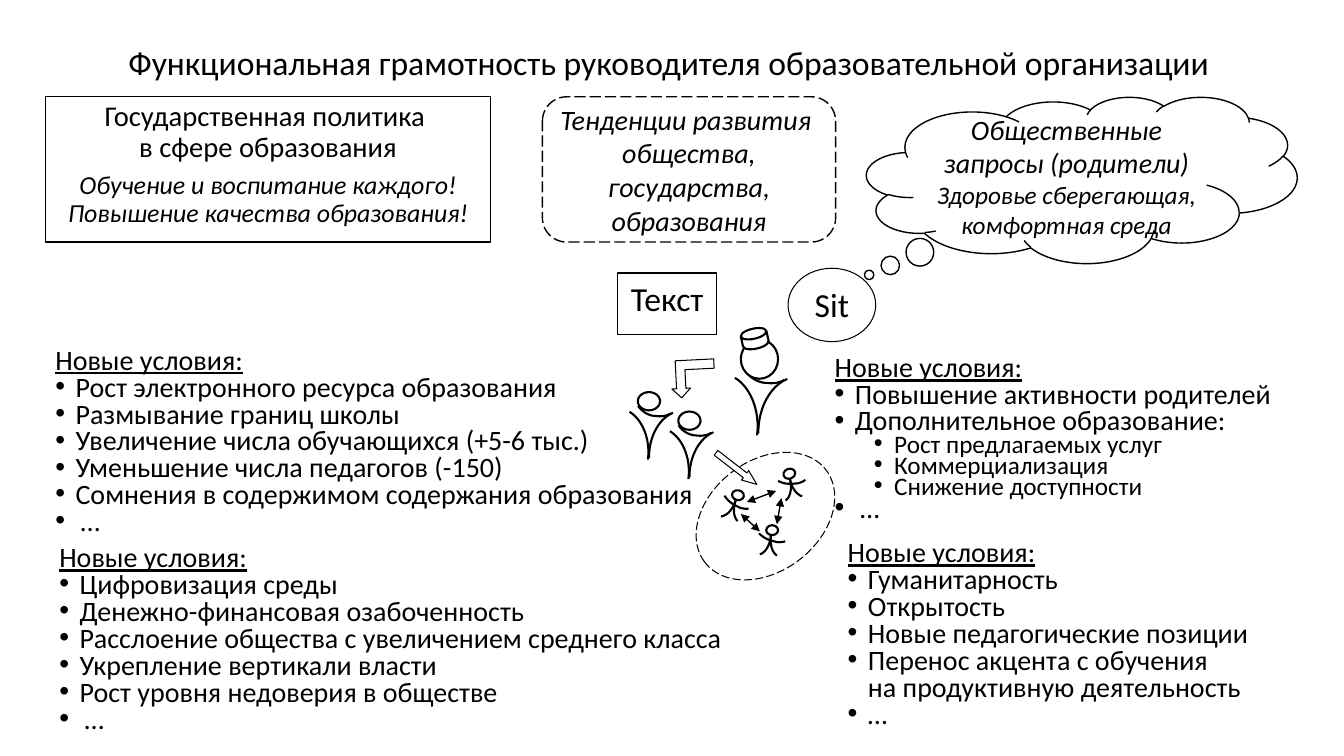
from dataclasses import dataclass
from math import cos, radians, sin

from lxml import etree
from pptx import Presentation
from pptx.dml.color import RGBColor
from pptx.enum import dml, shapes, text
from pptx.oxml.ns import qn
from pptx.util import Cm, Pt

KIND = shapes.MSO_SHAPE
DASH = dml.MSO_LINE.LONG_DASH


@dataclass
class Theme:
    font: str = "Calibri"
    ink: RGBColor = RGBColor(0, 0, 0)
    paper: RGBColor = RGBColor(255, 255, 255)
    big: float = 24
    lead: float = 20.4
    body: float = 20
    note: float = 18.5
    small: float = 18
    thin: float = 0.75
    line: float = 1
    bold: float = 1.5


# Body parts of the people: cubic curves and a head (x, y, width, height), cm
ADULT = [
    [(.69, -1.4), (.56, -1.32), (.41, -1.3), (.25, -1.32),
     (.03, -1.32), (-.18, -1.45), (-.3, -1.63)],
    [(-.56, -1.45), (-.18, -1.22), (.08, -.64), (0, 0)],
    [(.76, -1.42), (.33, -1.24), (.03, -.69), (.03, -.05)],
]
CHILD = [
    [(.36, .14), (.25, .17), (.15, .17), (.08, .14),
     (-.08, .11), (-.2, .04), (-.3, -.06)],
    [(.15, .5), (.03, .42), (-.03, .22), (0, -.01)],
    [(-.28, .47), (-.13, .42), (-.03, .24), (0, .01)],
]


def trace(curve, steps=12):
    """Points along a chain of cubic curves."""
    dots = [curve[0]]
    for i in range(0, len(curve) - 1, 3):
        for n in range(1, steps + 1):
            t = n / steps
            parts = ((1 - t) ** 3, 3 * t * (1 - t) ** 2, 3 * t * t * (1 - t), t ** 3)
            dots.append(tuple(sum(w * p[k] for w, p in zip(parts, curve[i:i + 4]))
                              for k in (0, 1)))
    return dots


class Deck:
    def __init__(self, theme):
        self.theme = theme
        self.show = Presentation()
        self.show.slide_width, self.show.slide_height = Cm(33.87), Cm(19.05)
        self.slide = self.show.slides.add_slide(self.show.slide_layouts[4])
        self.items = self.slide.shapes

    def style(self, par, size, italic=False, under=False):
        for run in par.runs:
            font = run.font
            font.name, font.size, font.bold = self.theme.font, Pt(size), False
            font.italic, font.underline = italic, under
            font.color.rgb = self.theme.ink

    def place(self, shape, box):
        shape.left, shape.top, shape.width, shape.height = map(Cm, box)

    def frame(self, shape, anchor):
        frame = shape.text_frame
        frame.word_wrap = True
        frame.auto_size = text.MSO_AUTO_SIZE.NONE
        frame.vertical_anchor = anchor
        return frame

    def paint(self, shape, width, fill=False, dash=None):
        shape.shadow.inherit = False
        if fill:
            shape.fill.solid()
            shape.fill.fore_color.rgb = self.theme.paper
        else:
            shape.fill.background()
        shape.line.color.rgb = self.theme.ink
        shape.line.width = Pt(width)
        if dash:
            shape.line.dash_style = dash

    def title(self, words, box):
        shape = self.items.title
        self.place(shape, box)
        par = self.frame(shape, text.MSO_ANCHOR.MIDDLE).paragraphs[0]
        par.text, par.alignment, par.line_spacing = words, text.PP_ALIGN.CENTER, 0.9
        self.style(par, self.theme.big)

    def form(self, kind, box, width, fill=False, dash=None, turn=0, adjust=()):
        shape = self.items.add_shape(kind, *map(Cm, box))
        self.paint(shape, width, fill, dash)
        shape.rotation = turn
        for i, value in enumerate(adjust):
            shape.adjustments[i] = value
        return shape

    def label(self, shape, lines, middle=False, space=1.0):
        """Each line is (words, size, italic, points before)."""
        spot = text.MSO_ANCHOR.MIDDLE if middle else text.MSO_ANCHOR.TOP
        frame = self.frame(shape, spot)
        for i, (words, size, italic, gap) in enumerate(lines):
            par = frame.add_paragraph() if i else frame.paragraphs[0]
            par.text, par.alignment = words, text.PP_ALIGN.CENTER
            par.line_spacing, par.space_before = space, Pt(gap)
            self.style(par, size, italic)

    def bullets(self, slot, box, lines, tight=0.8):
        """Each line is (kind, words); kinds are head, item, sub and more."""
        look = {"head": (0, 0), "item": (.51, .51), "sub": (1.5, .51), "more": (.64, .64)}
        shape = self.slide.placeholders[slot]
        self.place(shape, box)
        frame = self.frame(shape, text.MSO_ANCHOR.TOP)
        for i, (kind, words) in enumerate(lines):
            par = frame.add_paragraph() if i else frame.paragraphs[0]
            par.text, par.level = words, int(kind == "sub")
            par.line_spacing = 0.8 if kind == "item" else tight
            par.space_before = Pt(0)
            left, hang = look[kind]
            props = par._p.get_or_add_pPr()
            props.set("marL", str(Cm(left)))
            props.set("indent", str(-Cm(hang)))
            if kind == "head":
                etree.SubElement(props, qn("a:buNone"))
            else:
                etree.SubElement(props, qn("a:buFont")).set("typeface", "Arial")
                etree.SubElement(props, qn("a:buChar")).set("char", "•")
            size = self.theme.small if kind == "sub" else self.theme.body
            self.style(par, size, under=kind == "head")

    def link(self, start, end):
        line = self.items.add_connector(shapes.MSO_CONNECTOR.STRAIGHT, *map(Cm, start + end))
        line.line.color.rgb, line.line.width = self.theme.ink, Pt(self.theme.line)
        for tag in ("a:headEnd", "a:tailEnd"):
            etree.SubElement(line.line._get_or_add_ln(), qn(tag)).set("type", "triangle")
        etree.SubElement(line._element.spPr, qn("a:effectLst"))

    def person(self, x, y, curves, head, scale=1.0, turn=0):
        c, s = cos(radians(turn)), sin(radians(turn))

        def spot(p):
            return x + scale * (p[0] * c - p[1] * s), y + scale * (p[0] * s + p[1] * c)

        for curve in curves:
            dots = [tuple(map(Cm, spot(p))) for p in trace(curve)]
            pen = self.items.build_freeform(*dots[0])
            pen.add_line_segments(dots[1:], close=False)
            self.paint(pen.convert_to_shape(), self.theme.bold)
        wide, high = head[2:]
        mid = spot(head[:2])
        box = (mid[0] - wide / 2, mid[1] - high / 2, wide, high)
        self.form(KIND.OVAL, box, self.theme.bold, fill=True, turn=turn)


def main():
    look = Theme()
    deck = Deck(look)
    deck.title("Функциональная грамотность руководителя образовательной организации",
               (1.35, 1.02, 31.01, 1.19))

    # Teacher and two pupils
    deck.person(19.08, 10.97, ADULT, (.06, -1.92, .94, .99))
    deck.form(KIND.CAN, (18.69, 8.28, .66, .51), look.bold, True, turn=-12.6, adjust=[.5])
    for x, y in ((17.35, 12.07), (16.33, 11.58)):
        deck.person(x, y, ADULT, (.03, -1.77, .56, .46), scale=.83)

    # Circle of children
    deck.form(KIND.OVAL, (17.37, 11.61, 3.84, 2.79), look.thin, dash=DASH, turn=-37.2)
    for x, y, turn in ((18.54, 12.61, 11.6), (19.91, 12.08, -19.1), (19.43, 13.5, 0)):
        deck.person(x, y, CHILD, (.03, -.14, .3, .25), turn=turn)
    for start, end in (((18.67, 12.95), (19.15, 13.39)),
                       ((18.82, 12.65), (19.56, 12.37)),
                       ((19.69, 12.55), (19.58, 13.21))):
        deck.link(start, end)

    # Block arrows
    deck.form(KIND.RIGHT_ARROW, (17.91, 11.66, 1.3, .3), look.thin, True,
              turn=37.7, adjust=[.5, 1.25])
    deck.form(KIND.BENT_UP_ARROW, (16.92, 9.07, 1.09, .94), look.thin, True, turn=177.1)

    # Framed texts
    state = deck.form(KIND.RECTANGLE, (1.14, 2.44, 11.23, 3.66), look.thin)
    deck.label(state, [("Государственная политика \nв сфере образования", look.lead, False, 10),
                       ("Обучение и воспитание каждого!", look.note, True, 6),
                       ("Повышение качества образования!", look.note, True, 0)], space=.9)
    cloud = deck.form(KIND.CLOUD_CALLOUT, (21.84, 2.44, 10.85, 4.19), look.line,
                      adjust=[-.494, .571])
    deck.label(cloud, [("Общественные запросы (родители)", look.body, True, 0),
                       ("Здоровье сберегающая, комфортная среда", look.small, True, 0)], True)
    page = deck.form(KIND.RECTANGLE, (15.57, 6.88, 2.49, 1.55), look.thin)
    deck.label(page, [("Текст", look.big, False, 0)])
    case = deck.form(KIND.OVAL, (19.86, 6.76, 2.21, 1.85), look.thin)
    deck.label(case, [("Sit", look.big, False, 10)])
    trend = deck.form(KIND.ROUNDED_RECTANGLE, (13.67, 2.44, 7.39, 3.66), look.line, dash=DASH)
    deck.label(trend, [("Тенденции развития \nобщества, государства, образования",
                        look.body, True, 0)], True)

    # Lists of new conditions
    head, more = ("head", "Новые условия:"), ("more", "…")
    deck.bullets(1, (1.14, 8.66, 16.89, 5.03), [
        head, ("item", "Рост электронного ресурса образования"),
        ("item", "Размывание границ школы"),
        ("item", "Увеличение числа обучающихся (+5-6 тыс.)"),
        ("item", "Уменьшение числа педагогов (-150)"),
        ("item", "Сомнения в содержимом содержания образования"), more])
    deck.bullets(2, (1.24, 13.64, 17.53, 5.03), [
        head, ("item", "Цифровизация среды"), ("item", "Денежно-финансовая озабоченность"),
        ("item", "Расслоение общества с увеличением среднего класса"),
        ("item", "Укрепление вертикали власти"),
        ("item", "Рост уровня недоверия в обществе"), more])
    deck.bullets(3, (20.78, 8.92, 11.63, 4.78), [
        head, ("item", "Повышение активности родителей"),
        ("item", "Дополнительное образование:"), ("sub", "Рост предлагаемых услуг"),
        ("sub", "Коммерциализация"), ("sub", "Снижение доступности"), more], tight=.7)
    deck.bullets(4, (21.11, 13.51, 11.28, 4.9), [
        head, ("item", "Гуманитарность"), ("item", "Открытость"),
        ("item", "Новые педагогические позиции"),
        ("item", "Перенос акцента с обучения \nна продуктивную деятельность"), ("item", "…")])

    deck.show.save("out.pptx")


if __name__ == "__main__":
    main()
